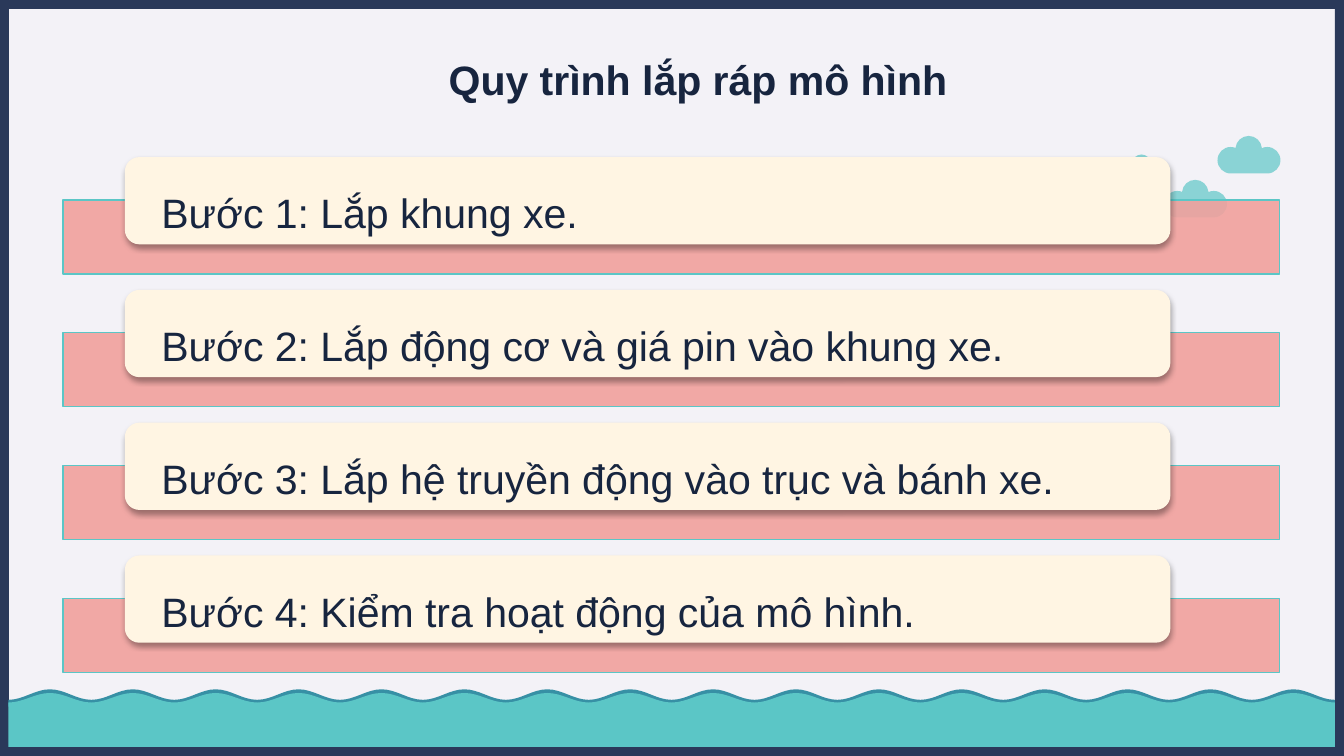
import math

from lxml import etree
from pptx import Presentation
from pptx import util as u
from pptx.dml.color import RGBColor
from pptx.enum import shapes, text
from pptx.oxml.ns import qn

COLORS = {
    "background": "F3F2F7",
    "frame": "2A395A",
    "foam": "3790A5",
    "sea": "5BC6C6",
    "bar": "F1A19D",
    "card": "FFF5E3",
    "ink": "17253F",
    "shadow": "000000",
}
STEPS = [
    "Bước 1: Lắp khung xe.",
    "Bước 2: Lắp động cơ và giá pin vào khung xe.",
    "Bước 3: Lắp hệ truyền động vào trục và bánh xe.",
    "Bước 4: Kiểm tra hoạt động của mô hình.",
]
STEP_PITCH = 2.51
CLOUDS = [(21.16, 2.92, 0.7), (23.01, 2.57, 1), (22, 3.4, 1)]
# Center, radius and break angles (clockwise from the right) of the cloud's arcs
CLOUD_ARCS = [
    (0.94, 0.46, 0.25, (90, 0, -90, -115)),
    (0.59, 0.25, 0.25, (-5, -90, -175)),
    (0.25, 0.46, 0.25, (-65, -90, -180, -270)),
]
SEA_LEFT = 0.16
HALF_WAVE = 23.5 / 30
HALF_WAVES = 32


def color(name):
    return RGBColor.from_string(COLORS[name])


def style_shape(shape, fill, alpha=100, line=None):
    shape.shadow.inherit = False
    shape.fill.solid()
    shape.fill.fore_color.rgb = color(fill)
    if alpha < 100:
        tone = shape.fill._xPr.find(qn("a:solidFill"))[0]
        etree.SubElement(tone, qn("a:alpha"), val=str(alpha * 1000))
    if line:
        shape.line.color.rgb = color(line)
        shape.line.width = u.Pt(0.75)
    else:
        shape.line.fill.background()


def add_block(page, kind, left, top, width, height, fill, **style):
    block = page.shapes.add_shape(
        kind, u.Cm(left), u.Cm(top), u.Cm(width), u.Cm(height))
    style_shape(block, fill, **style)
    return block


def add_curved_outline(page, points, fill, alpha=100):
    """Add a closed freeform: a start point, then three points per Bézier curve."""
    start, *rest = [(u.Cm(x), u.Cm(y)) for x, y in points]
    builder = page.shapes.build_freeform(*start)
    builder.add_line_segments(rest, close=True)
    outline = builder.convert_to_shape()
    corners = list(outline._element.iter(qn("a:lnTo")))
    for index in range(0, len(corners), 3):
        curve = etree.Element(qn("a:cubicBezTo"))
        corners[index].addprevious(curve)
        for corner in corners[index:index + 3]:
            curve.append(corner[0])
            corner.getparent().remove(corner)
    style_shape(outline, fill, alpha)


def straight(first, last):
    return [first, last, last]


def add_wave(page, crest, depth, bottom, fill):
    levels = (crest + depth, crest)
    points = [(SEA_LEFT, levels[0])]
    for index in range(HALF_WAVES):
        x = SEA_LEFT + index * HALF_WAVE
        here, there = levels[index % 2], levels[(index + 1) % 2]
        points += [(x + 0.36 * HALF_WAVE, here),
                   (x + 0.64 * HALF_WAVE, there),
                   (x + HALF_WAVE, there)]
    right, left = (points[-1][0], bottom), (SEA_LEFT, bottom)
    points += straight(points[-1], right) + straight(right, left)
    add_curved_outline(page, points, fill)


def arc(center_x, center_y, radius, angles):
    """List the start point and the Bézier points of a circular arc."""
    def point(angle, pull=0):
        return (center_x + radius * (math.cos(angle) - pull * math.sin(angle)),
                center_y + radius * (math.sin(angle) + pull * math.cos(angle)))

    turns = [math.radians(angle) for angle in angles]
    points = [point(turns[0])]
    for first, last in zip(turns, turns[1:]):
        pull = 4 / 3 * math.tan((last - first) / 4)
        points += [point(first, pull), point(last, -pull), point(last)]
    return points


def add_cloud(page, left, top, scale):
    points = []
    for part in CLOUD_ARCS:
        start, *curves = arc(*part)
        points += straight(points[-1], start) if points else [start]
        points += curves
    add_curved_outline(
        page, [(left + x * scale, top + y * scale) for x, y in points],
        "sea", alpha=69)


def write_text(box, words, inset_x=0, inset_y=0, bold=False, spacing=1.0):
    frame = box.text_frame
    frame.word_wrap = True
    frame.auto_size = text.MSO_AUTO_SIZE.NONE
    frame.vertical_anchor = text.MSO_ANCHOR.MIDDLE
    frame.margin_left = frame.margin_right = u.Cm(inset_x)
    frame.margin_top = frame.margin_bottom = u.Cm(inset_y)
    para = frame.paragraphs[0]
    para.alignment = text.PP_ALIGN.LEFT
    para.line_spacing = spacing
    span = para.add_run()
    span.text = words
    span.font.name = "Arial"
    span.font.size = u.Pt(22)
    span.font.bold = bold
    span.font.color.rgb = color("ink")


def add_shadow(shape):
    effects = shape._element.spPr.find(qn("a:effectLst"))
    shadow = etree.SubElement(
        effects, qn("a:outerShdw"), blurRad=str(u.Pt(3.1)),
        dist=str(u.Pt(1.8)), dir="5400000", algn="t", rotWithShape="0")
    tone = etree.SubElement(shadow, qn("a:srgbClr"), val=COLORS["shadow"])
    etree.SubElement(tone, qn("a:alpha"), val="35000")


def add_step(page, words, top):
    preset = shapes.MSO_SHAPE
    add_block(page, preset.RECTANGLE, 1.19, top + 0.81, 22.99, 1.4, "bar",
              alpha=90, line="sea")
    card = add_block(page, preset.ROUNDED_RECTANGLE, 2.36, top, 19.76, 1.65, "card")
    add_shadow(card)
    label = page.shapes.add_textbox(
        u.Cm(2.44), u.Cm(top + 0.08), u.Cm(19.61), u.Cm(1.47))
    write_text(label, words, inset_x=0.61, spacing=1.5)


def add_title(page, words):
    title = page.shapes.title
    title.left, title.top = u.Cm(8.23), u.Cm(0.69)
    title.width, title.height = u.Cm(21.41), u.Cm(1.6)
    write_text(title, words, inset_x=0.25, inset_y=0.25, bold=True)


def main():
    deck = Presentation()
    deck.slide_width, deck.slide_height = u.Cm(25.4), u.Cm(14.29)
    page = deck.slides.add_slide(deck.slide_layouts[5])
    page.background.fill.solid()
    page.background.fill.fore_color.rgb = color("background")

    border = add_block(page, shapes.MSO_SHAPE.FRAME, 0, 0, 25.4, 14.29, "frame")
    border.adjustments[0] = 0.012
    add_wave(page, 13.03, 0.2, 13.36, "foam")
    add_wave(page, 13.1, 0.18, 14.12, "sea")
    for cloud in CLOUDS:
        add_cloud(page, *cloud)
    add_title(page, "Quy trình lắp ráp mô hình")
    for index, words in enumerate(STEPS):
        add_step(page, words, 2.97 + index * STEP_PITCH)
    deck.save("out.pptx")


if __name__ == "__main__":
    main()
